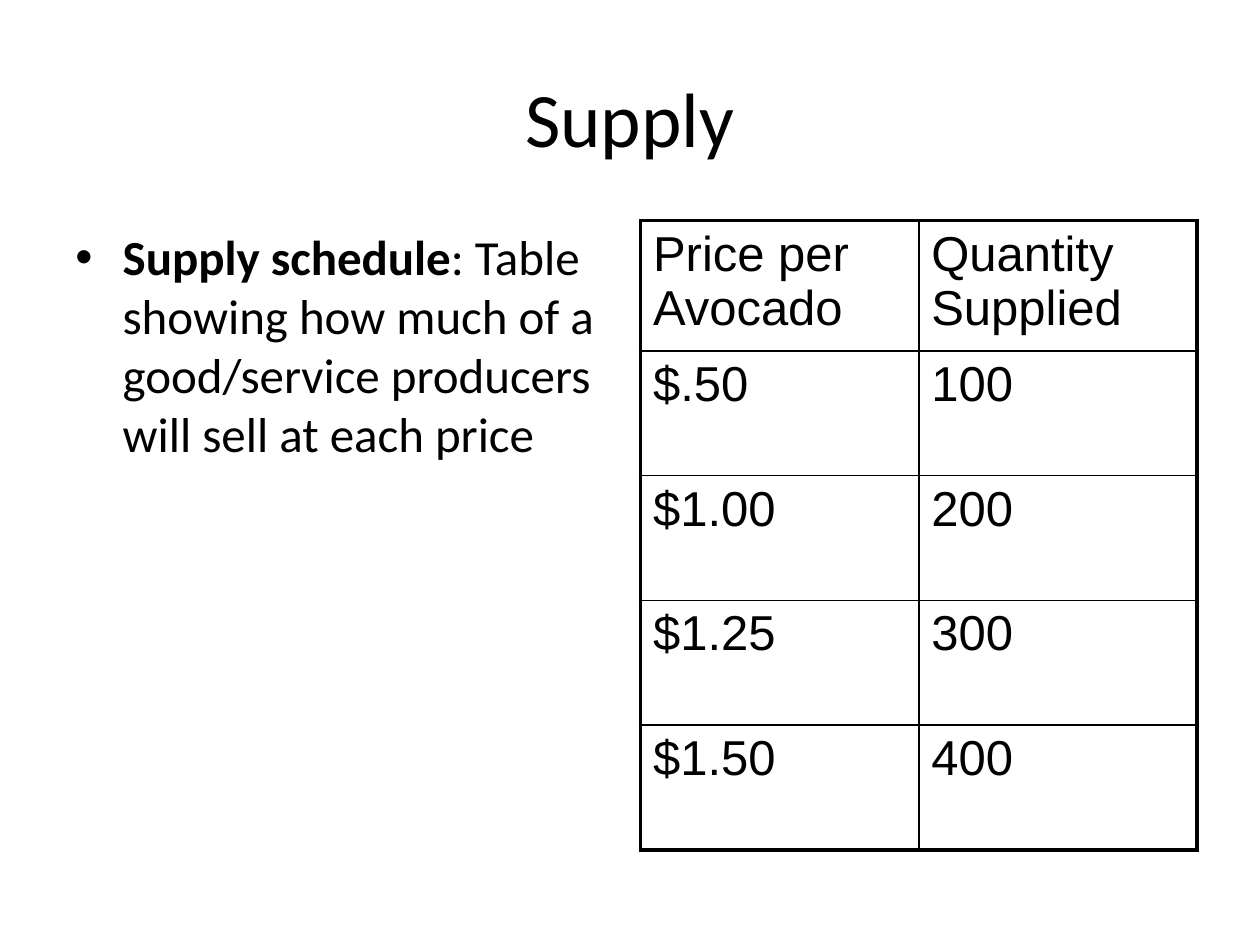
from dataclasses import dataclass

from lxml import etree
from pptx import Presentation
from pptx.dml.color import RGBColor
from pptx.enum.text import MSO_ANCHOR, PP_ALIGN
from pptx.oxml.ns import qn
from pptx.util import Pt

CENTER = PP_ALIGN.CENTER
LEFT = PP_ALIGN.LEFT
MIDDLE = MSO_ANCHOR.MIDDLE
TOP = MSO_ANCHOR.TOP
BLANK_LAYOUT = 6


@dataclass(frozen=True)
class Theme:
    ink: str = "000000"
    heading_font: str = "Calibri"
    table_font: str = "Arial"
    title_size: float = 44
    body_size: float = 28
    outer_border: float = 2.25
    inner_border: float = 1
    bullet_indent: float = 27


class SlideBuilder:
    def __init__(self, slide, theme):
        self.slide = slide
        self.theme = theme

    def format_run(self, run, font_name, size, bold=False):
        run.font.name = font_name
        run.font.size = Pt(size)
        run.font.bold = bold
        run.font.color.rgb = RGBColor.from_string(self.theme.ink)

    def text_box(self, left, top, width, height, anchor):
        shape = self.slide.shapes.add_textbox(Pt(left), Pt(top), Pt(width), Pt(height))
        text_frame = shape.text_frame
        text_frame.word_wrap = True
        text_frame.vertical_anchor = anchor
        return text_frame

    def title(self, text, left, top, width, height):
        text_frame = self.text_box(left, top, width, height, MIDDLE)
        text_frame.text = text
        paragraph = text_frame.paragraphs[0]
        paragraph.alignment = CENTER
        self.format_run(paragraph.runs[0], self.theme.heading_font, self.theme.title_size)

    def definition(self, term, meaning, left, top, width, height):
        text_frame = self.text_box(left, top, width, height, TOP)
        paragraph = text_frame.paragraphs[0]
        paragraph.alignment = LEFT
        for text, bold in ((term, True), (meaning, False)):
            run = paragraph.add_run()
            run.text = text
            self.format_run(run, self.theme.heading_font, self.theme.body_size, bold)
        self.bullet(paragraph)

    def bullet(self, paragraph):
        indent = Pt(self.theme.bullet_indent)
        properties = paragraph._p.get_or_add_pPr()
        properties.set("marL", str(indent))
        properties.set("indent", str(-indent))
        etree.SubElement(properties, qn("a:buFont"), typeface="Arial")
        etree.SubElement(properties, qn("a:buChar"), char="•")

    def table(self, rows, left, top, width, row_heights):
        row_count, column_count = len(rows), len(rows[0])
        frame = self.slide.shapes.add_table(
            row_count, column_count, Pt(left), Pt(top), Pt(width), Pt(sum(row_heights))
        )
        table = frame.table
        table.first_row = False
        table.horz_banding = False
        for column in table.columns:
            column.width = Pt(width / column_count)
        for row_index, (texts, height) in enumerate(zip(rows, row_heights)):
            table.rows[row_index].height = Pt(height)
            for column_index, text in enumerate(texts):
                cell = table.cell(row_index, column_index)
                cell.text_frame.text = text
                run = cell.text_frame.paragraphs[0].runs[0]
                self.format_run(run, self.theme.table_font, self.theme.body_size)
                self.borders(cell, {
                    "a:lnL": column_index == 0,
                    "a:lnR": column_index == column_count - 1,
                    "a:lnT": row_index == 0,
                    "a:lnB": row_index == row_count - 1,
                })
                cell.fill.background()

    def borders(self, cell, outer_sides):
        properties = cell._tc.get_or_add_tcPr()
        for tag, is_outer in outer_sides.items():
            weight = self.theme.outer_border if is_outer else self.theme.inner_border
            line = etree.SubElement(properties, qn(tag), w=str(Pt(weight)))
            fill = etree.SubElement(line, qn("a:solidFill"))
            etree.SubElement(fill, qn("a:srgbClr"), val=self.theme.ink)


def main():
    presentation = Presentation()
    presentation.slide_width = Pt(720)
    presentation.slide_height = Pt(540)
    slide = presentation.slides.add_slide(presentation.slide_layouts[BLANK_LAYOUT])
    builder = SlideBuilder(slide, Theme())

    margin, content_top, column_width = 36, 126, 318
    builder.title("Supply", margin, 21.6, 648, 90)
    builder.definition(
        "Supply schedule",
        ": Table showing how much of a good/service producers will sell at each price",
        margin, content_top, column_width, 356.4,
    )
    supply_schedule = [
        ("Price per Avocado", "Quantity Supplied"),
        ("$.50", "100"),
        ("$1.00", "200"),
        ("$1.25", "300"),
        ("$1.50", "400"),
    ]
    table_left = 720 - margin - column_width
    builder.table(supply_schedule, table_left, content_top, column_width, [74.2] + [71.3] * 4)
    presentation.save("out.pptx")


if __name__ == "__main__":
    main()
